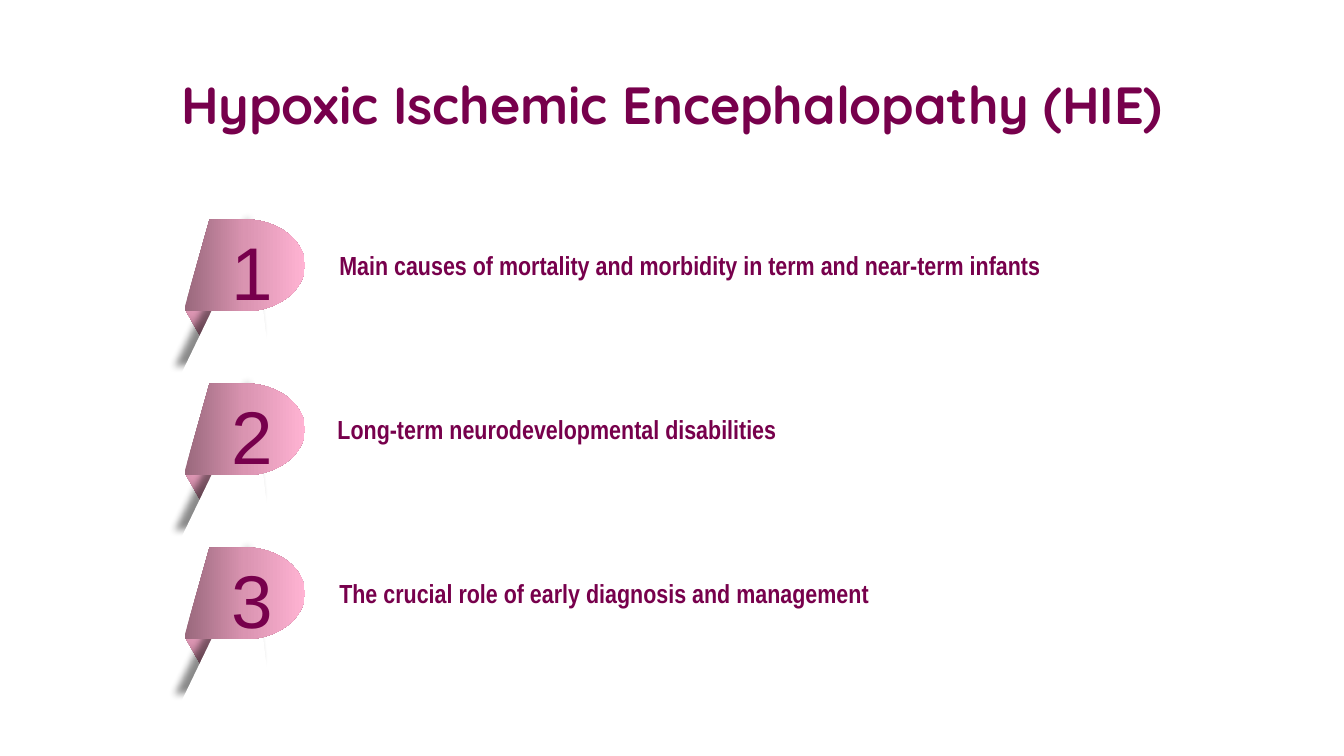
from copy import deepcopy

from lxml.etree import SubElement
from pptx import Presentation
from pptx.dml.color import RGBColor
from pptx.enum.shapes import MSO_SHAPE
from pptx.enum.text import MSO_ANCHOR, MSO_AUTO_SIZE, PP_ALIGN
from pptx.oxml.ns import qn
from pptx.util import Pt

TITLE = "Hypoxic Ischemic Encephalopathy (HIE)"
# Text, left edge and width of its box
POINTS = [
    ("Main causes of mortality and morbidity in term and near-term infants", 174.7, 437),
    ("Long-term neurodevelopmental disabilities", 173.7, 258.5),
    ("The crucial role of early diagnosis and management", 174.7, 312.5),
]

PLUM = RGBColor(0x77, 0x00, 0x4C)
WHITE = RGBColor(0xFF, 0xFF, 0xFF)
PINKS = [
    (0, RGBColor(0x99, 0x68, 0x7C)),
    (0.5, RGBColor(0xDA, 0x94, 0xB1)),
    (1, RGBColor(0xFF, 0xB3, 0xD3)),
]

FIRST_TOP, PITCH = 117.5, 87.84
FLAG_LEFT, FLAG_SHOULDER, FLAG_HEIGHT = 99.1, 112.3, 49.3
CURVE_LEFT, CURVE_WIDTH = 131, 32.4
KAPPA = 0.55  # control-point distance of a quarter ellipse


def fill_pink(shape):
    """Give the shape the three-stop pink gradient and no outline."""
    shape.shadow.inherit = False
    shape.line.fill.background()
    shape.fill.gradient()
    shape.fill.gradient_angle = 0
    stop_list = shape._element.spPr.find(qn("a:gradFill")).find(qn("a:gsLst"))
    stop_list.append(deepcopy(stop_list[-1]))
    for stop, (position, colour) in zip(shape.fill.gradient_stops, PINKS):
        stop.position = position
        stop.color.rgb = colour


def add_pole_shadow(shape):
    shape.shadow.inherit = False
    effects = shape._element.spPr.find(qn("a:effectLst"))
    shadow = SubElement(effects, qn("a:outerShdw"), blurRad=str(Pt(4)), dist=str(Pt(5)),
                        dir=str(230 * 60000), algn="ctr", rotWithShape="0")
    colour = SubElement(shadow, qn("a:srgbClr"), val="000000")
    SubElement(colour, qn("a:alpha"), val="45000")


def merge_into_curve(lines):
    """Turn three line segments into one cubic curve through their end points."""
    curve = lines[0].makeelement(qn("a:cubicBezTo"))
    lines[0].addprevious(curve)
    for line in lines:
        curve.append(line[0])
        line.getparent().remove(line)


def format_text(shape, font_name, size, bold):
    font = shape.text_frame.paragraphs[0].runs[0].font
    font.name, font.size, font.bold = font_name, Pt(size), bold
    font.color.rgb = PLUM


def add_label(shapes, text, box, font_name, size, bold, wrap):
    label = shapes.add_textbox(*map(Pt, box))
    label.text_frame.text = text
    label.text_frame.word_wrap = wrap
    label.text_frame.auto_size = MSO_AUTO_SIZE.SHAPE_TO_FIT_TEXT
    format_text(label, font_name, size, bold)


def add_banner(shapes, top):
    bottom, middle, right = top + FLAG_HEIGHT, top + FLAG_HEIGHT / 2, CURVE_LEFT + CURVE_WIDTH
    pull_x = CURVE_LEFT + KAPPA * CURVE_WIDTH
    pull_y = KAPPA * FLAG_HEIGHT / 2
    outline = [
        (CURVE_LEFT, top),
        (pull_x, top), (right, middle - pull_y), (right, middle),
        (right, middle + pull_y), (pull_x, bottom), (CURVE_LEFT, bottom),
        (FLAG_LEFT, bottom), (FLAG_LEFT, bottom - 2.6), (FLAG_SHOULDER, top),
    ]
    builder = shapes.build_freeform(Pt(FLAG_SHOULDER), Pt(top))
    builder.add_line_segments([(Pt(x), Pt(y)) for x, y in outline], close=True)
    banner = builder.convert_to_shape()
    lines = list(banner._element.spPr.iter(qn("a:lnTo")))
    merge_into_curve(lines[1:4])
    merge_into_curve(lines[4:7])
    fill_pink(banner)


def add_flag(slide, number, top):
    shapes = slide.shapes.add_group_shape().shapes

    fold = shapes.add_shape(MSO_SHAPE.ISOSCELES_TRIANGLE,
                            Pt(96.5), Pt(top + 45.2), Pt(19.4), Pt(14.4))
    fold.rotation = 296.5
    fill_pink(fold)

    pole = shapes.add_shape(MSO_SHAPE.DIAGONAL_STRIPE,
                            Pt(92.7), Pt(top + 5.2), Pt(47.5), Pt(74.9))
    pole.adjustments[0] = 0.171
    pole.rotation = 173.4
    pole.fill.solid()
    pole.fill.fore_color.rgb = WHITE
    pole.line.fill.background()
    add_pole_shadow(pole)

    add_banner(shapes, top)
    add_label(shapes, str(number), (117, top, 34.6, 55.4), "Arial", 40, False, False)


presentation = Presentation()
presentation.slide_width, presentation.slide_height = Pt(720), Pt(405)
slide = presentation.slides.add_slide(presentation.slide_layouts[5])

title = slide.shapes.title
title.left, title.top, title.width, title.height = map(Pt, (61.5, 31, 596.9, 49))
frame = title.text_frame
frame.text = TITLE
frame.vertical_anchor = MSO_ANCHOR.MIDDLE
frame.margin_left = frame.margin_right = frame.margin_top = frame.margin_bottom = Pt(7.2)
frame.paragraphs[0].alignment = PP_ALIGN.CENTER
format_text(title, "Quicksand", 28, True)

for index, (text, left, width) in enumerate(POINTS):
    top = FIRST_TOP + index * PITCH
    add_flag(slide, index + 1, top)
    add_label(slide.shapes, text, (left, top + 12.8, width, 24.5),
              "Arial Narrow", 14, True, True)

presentation.save("out.pptx")
